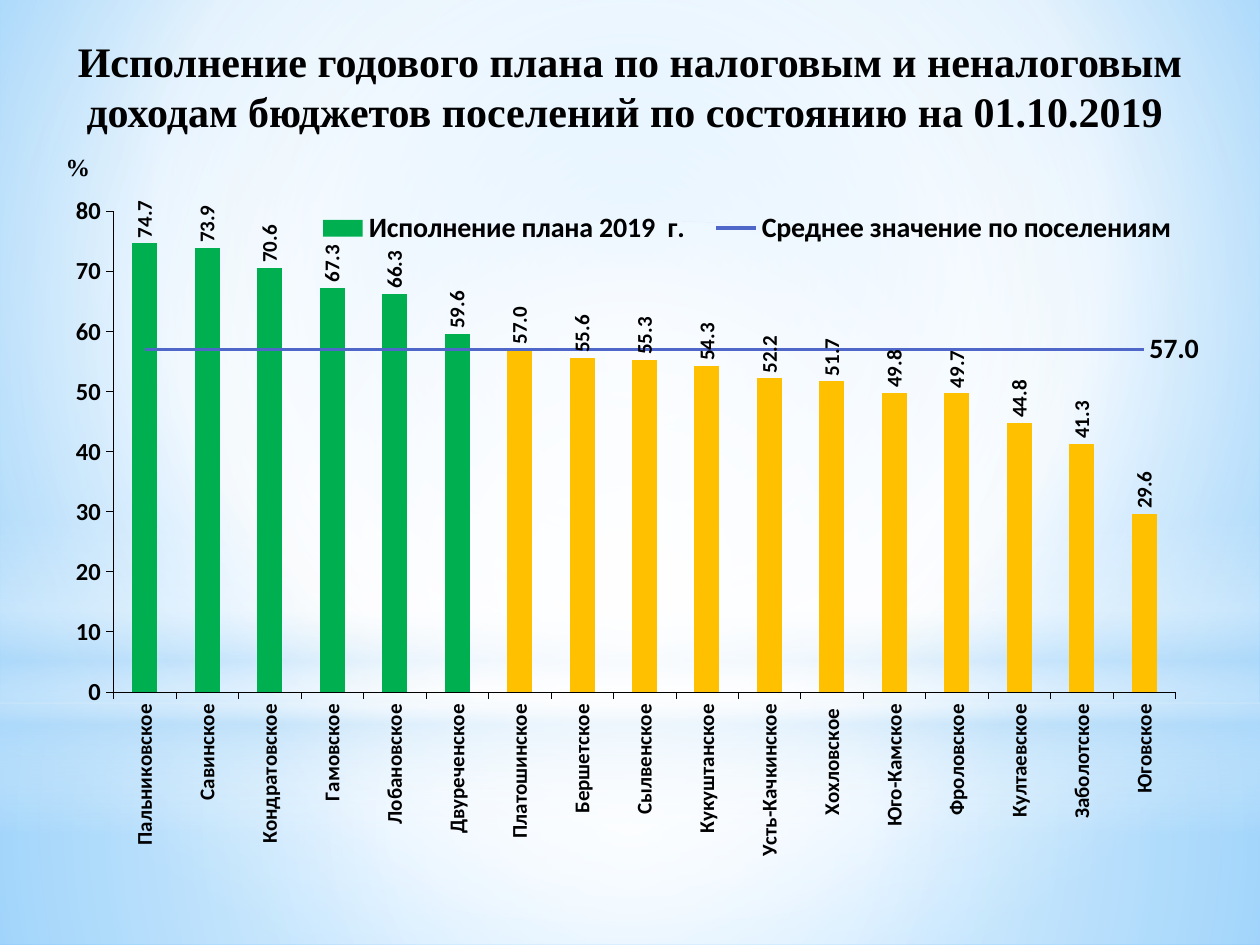
from lxml import etree
from pptx import Presentation
from pptx.chart import data as cd
from pptx.dml.color import RGBColor
from pptx.enum import chart as ce, shapes, text
from pptx.oxml import ns, parse_xml
from pptx.util import Inches, Pt

HUE = {"ink": "000000", "green": "00B050", "gold": "FFC000", "line": "4E67C8",
       "white": "FFFFFF", "pale": "B4DCFA", "sky": "9ED5FF", "deep": "5BB9FF"}
SERIF, SANS = "Times New Roman", "Calibri"
MEAN = 57
RATES = {
    "Пальниковское": 74.7, "Савинское": 73.9, "Кондратовское": 70.6,
    "Гамовское": 67.3, "Лобановское": 66.3, "Двуреченское": 59.6,
    "Платошинское": 57, "Бершетское": 55.6, "Сылвенское": 55.3,
    "Кукуштанское": 54.3, "Усть-Качкинское": 52.2, "Хохловское ": 51.7,
    "Юго-Камское": 49.8, "Фроловское": 49.7, "Култаевское": 44.8,
    "Заболотское": 41.3, "Юговское": 29.6,
}


def rgb(name):
    return RGBColor.from_string(HUE[name])


def style(font, size, face=SANS):
    font.size, font.name, font.bold = Pt(size), face, True
    font.color.rgb = rgb("ink")


def shade(host, stops, rect=None):
    marks = "".join(
        f'<a:gs pos="{pos * 1000}"><a:srgbClr val="{HUE[hue]}">'
        f'<a:alpha val="{alpha * 1000}"/></a:srgbClr></a:gs>'
        for pos, hue, alpha in stops)
    if rect:
        sides = " ".join(f'{k}="{v * 1000}"' for k, v in zip("ltrb", rect))
        flow = f'<a:path path="circle"><a:fillToRect {sides}/></a:path>'
    else:
        flow = '<a:lin ang="5400000" scaled="0"/>'
    grad = parse_xml(f'<a:gradFill {ns.nsdecls("a")} rotWithShape="1">'
                     f'<a:gsLst>{marks}</a:gsLst>{flow}</a:gradFill>')
    host.replace(host.find(ns.qn("a:solidFill")), grad)


def add_glow(slide, kind, box, stops, rect=None):
    shape = slide.shapes.add_shape(kind, *map(Inches, box))
    shape.shadow.inherit = False
    shape.line.fill.background()
    shape.fill.solid()
    shade(shape._element.spPr, stops, rect)


def add_backdrop(slide, box):
    x, y, w, h = box
    mid = (50, 50, 50, 50)
    rect, oval = shapes.MSO_SHAPE.RECTANGLE, shapes.MSO_SHAPE.OVAL
    slide.background.fill.solid()
    shade(slide._element.find(".//" + ns.qn("p:bgPr")),
          [(0, "sky", 100), (60, "white", 100), (100, "deep", 100)],
          (20, 10, 20, 60))
    add_glow(slide, rect, (x, y + 5.58, w, h - 5.58),
             [(0, "white", 91), (37, "white", 76), (100, "pale", 79)], mid)
    add_glow(slide, rect, (x, y, w, 5.58),
             [(0, "white", 89), (48, "white", 62), (100, "pale", 79)], mid)
    add_glow(slide, rect, (x, y + 4.12, w, 2.5),
             [(0, "white", 0), (29, "white", 30), (45, "pale", 40),
              (55, "white", 26), (65, "pale", 60), (100, "white", 0)])
    add_glow(slide, oval, (x, y + 1.75, w, 5.58),
             [(0, "white", 100), (56, "white", 0)], mid)


def add_text(slide, box, words, size, align):
    frame = slide.shapes.add_textbox(*map(Inches, box)).text_frame
    frame.word_wrap = True
    frame.margin_left = frame.margin_right = Inches(0.05)
    frame.vertical_anchor = text.MSO_ANCHOR.MIDDLE
    para = frame.paragraphs[0]
    para.text, para.alignment = words, align
    style(para.font, size, SERIF)


def place(host, box, spot, inner=False):
    for old in host.findall(ns.qn("c:layout")):
        host.remove(old)
    target = '<c:layoutTarget val="inner"/>' if inner else ""
    modes = '<c:xMode val="edge"/><c:yMode val="edge"/>'
    sizes = "".join(f'<c:{k} val="{v}"/>' for k, v in zip("xywh", box))
    host.insert(spot, parse_xml(
        f'<c:layout {ns.nsdecls("c")}><c:manualLayout>{target}{modes}{sizes}'
        '</c:manualLayout></c:layout>'))


def turn(host):
    body = host.find(ns.qn("c:txPr")).find(ns.qn("a:bodyPr"))
    body.set("rot", "-5400000")
    body.set("vert", "horz")


def split_line(area):
    bars = area.find(ns.qn("c:barChart"))
    ser = bars.findall(ns.qn("c:ser"))[1]
    for flag in ser.findall(ns.qn("c:invertIfNegative")):
        ser.remove(flag)
    line = parse_xml(f'<c:lineChart {ns.nsdecls("c")}><c:grouping val="standard"/>'
                     '<c:varyColors val="0"/></c:lineChart>')
    line.append(ser)
    etree.SubElement(line, ns.qn("c:marker")).set("val", "1")
    for axis in bars.findall(ns.qn("c:axId")):
        etree.SubElement(line, ns.qn("c:axId")).set("val", axis.get("val"))
    bars.addnext(line)


def style_bars(plot):
    plot.gap_width, plot.vary_by_categories = 150, False
    bars = plot.series[0]
    bars.invert_if_negative = False
    bars.format.fill.solid()
    bars.format.fill.fore_color.rgb = rgb("green")
    for i, rate in enumerate(RATES.values()):
        if rate <= MEAN:
            fill = bars.points[i].format.fill
            fill.solid()
            fill.fore_color.rgb = rgb("gold")
    tags = bars.data_labels
    tags.show_value = True
    tags.number_format, tags.number_format_is_linked = "#,##0.0", False
    tags.position = ce.XL_LABEL_POSITION.OUTSIDE_END
    style(tags.font, 12)
    turn(tags._element)


def style_mean(plot):
    mean = plot.series[0]
    mean.smooth = False
    mean.marker.style = ce.XL_MARKER_STYLE.NONE
    mean.format.line.color.rgb = rgb("line")
    mean.format.line.width = Pt(2.25)
    mean.data_labels.show_value = False
    tag = mean.points[len(RATES) - 1].data_label
    style(tag.font, 16)
    tag.position = ce.XL_LABEL_POSITION.RIGHT


def style_axis(axis, size):
    axis.has_major_gridlines = False
    axis.major_tick_mark = ce.XL_TICK_MARK.OUTSIDE
    axis.minor_tick_mark = ce.XL_TICK_MARK.NONE
    axis.format.line.color.rgb = rgb("ink")
    axis.format.line.width = Pt(0.25)
    style(axis.tick_labels.font, size)


def add_rates(slide, box):
    data = cd.CategoryChartData(number_format="#,##0.0")
    data.categories = list(RATES)
    data.add_series("Исполнение плана 2019  г. ", list(RATES.values()))
    data.add_series("Среднее значение по поселениям", [MEAN] * len(RATES))
    chart = slide.shapes.add_chart(ce.XL_CHART_TYPE.COLUMN_CLUSTERED,
                                   *map(Inches, box), data).chart
    style(chart.font, 18)
    chart.has_title = False
    area = chart._chartSpace.chart.plotArea
    split_line(area)
    place(area, (0.061, 0.022, 0.87, 0.654), 0, True)
    style_bars(chart.plots[0])
    style_mean(chart.plots[1])

    names, scale = chart.category_axis, chart.value_axis
    style_axis(names, 12)
    names.tick_label_position = ce.XL_TICK_LABEL_POSITION.LOW
    turn(names._element)
    style_axis(scale, 14)
    scale.minimum_scale, scale.maximum_scale, scale.major_unit = 0, 80, 10
    scale.tick_labels.number_format = "0"
    scale.tick_labels.number_format_is_linked = False

    chart.has_legend = True
    key = chart.legend
    key.position = ce.XL_LEGEND_POSITION.BOTTOM
    key.include_in_layout = False
    style(key.font, 16)
    place(key._element, (0.22, 0.02, 0.72, 0.05), 1)


def main():
    deck = Presentation()
    deck.slide_width, deck.slide_height = Inches(10), Inches(7.5)
    slide = deck.slides.add_slide(deck.slide_layouts[6])
    add_backdrop(slide, (0, 0, 10, 7.5))
    add_text(slide, (0.5, 0.21, 9, 0.94),
             "Исполнение годового плана по налоговым и неналоговым доходам "
             "бюджетов поселений по состоянию на 01.10.2019 ",
             24, text.PP_ALIGN.CENTER)
    add_rates(slide, (0.31, 1.55, 9.69, 5.83))
    add_text(slide, (0.47, 1.15, 0.52, 0.34), "%", 14, text.PP_ALIGN.LEFT)
    deck.save("out.pptx")


if __name__ == "__main__":
    main()
